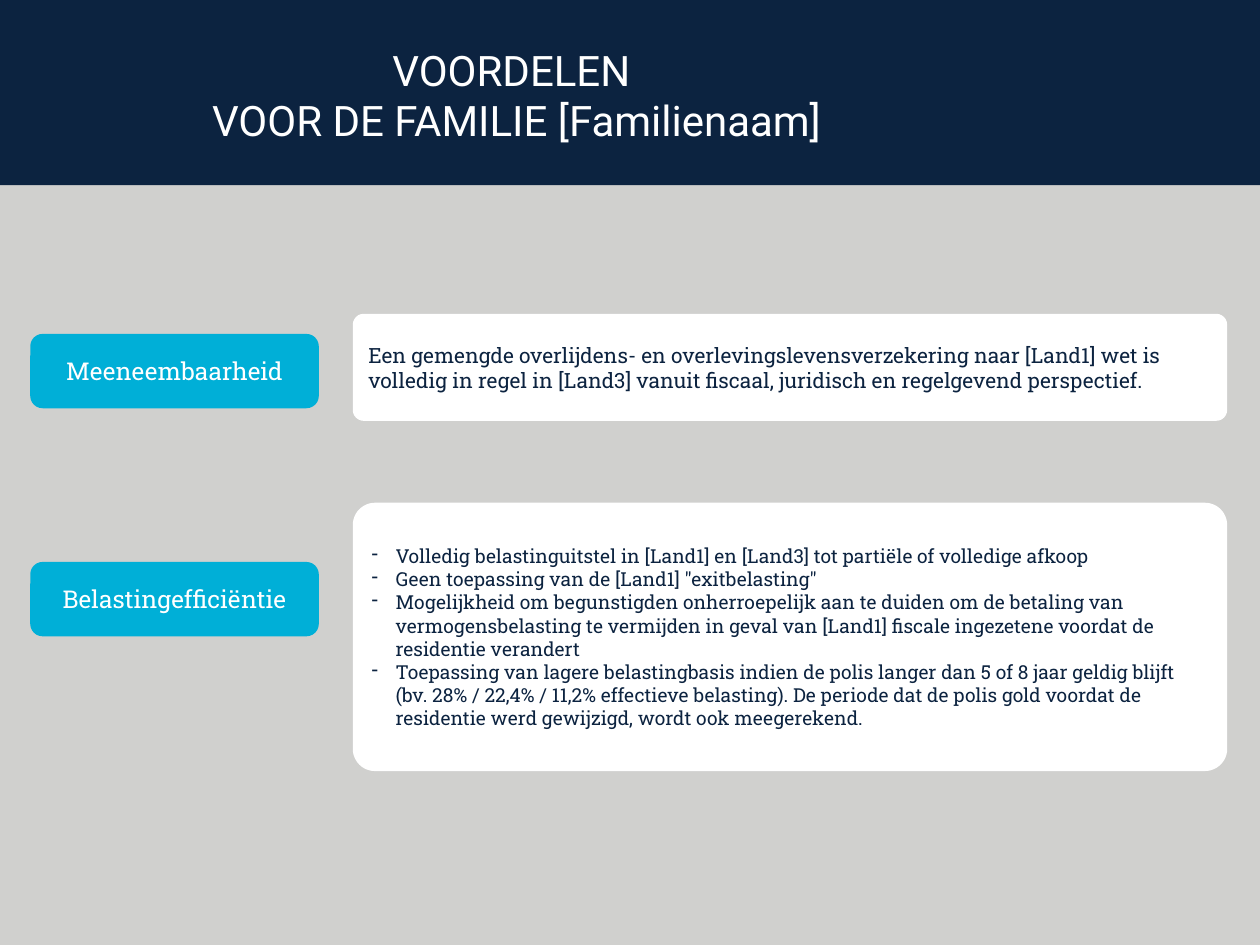
import dataclasses

import lxml.etree
import pptx
import pptx.dml.color
import pptx.enum.shapes
import pptx.enum.text
import pptx.oxml.ns
import pptx.util

ALIGN = pptx.enum.text.PP_ALIGN
ANCHOR = pptx.enum.text.MSO_ANCHOR
SHAPE = pptx.enum.shapes.MSO_SHAPE
inch = pptx.util.Inches


@dataclasses.dataclass(frozen=True)
class Theme:
    navy: str = "0C2340"
    cyan: str = "00AFD7"
    grey: str = "D0D0CE"
    white: str = "FFFFFF"
    title_font: str = "Roboto"
    body_font: str = "Roboto Slab"
    title_size: int = 24
    label_size: int = 14
    text_size: int = 12
    list_size: int = 11


THEME = Theme()

# Columns as (left, width); rows as (top, height), in inches
LABEL_COL = (0.24, 2.29)
PANEL_COL = (2.8, 6.94)
LABEL_HEIGHT = 0.59
HANGING = 0.19

TITLE = ["VOORDELEN ", "VOOR DE FAMILIE [Familienaam]"]
PORTABILITY = [
    "Een gemengde overlijdens- en overlevingslevensverzekering naar [Land1] wet is "
    "volledig in regel in [Land3] vanuit fiscaal, juridisch en regelgevend perspectief.",
]
TAX_EFFICIENCY = [
    "Volledig belastinguitstel in [Land1] en [Land3] tot partiële of volledige afkoop",
    'Geen toepassing van de [Land1] "exitbelasting"',
    "Mogelijkheid om begunstigden onherroepelijk aan te duiden om de betaling van "
    "vermogensbelasting te vermijden in geval van [Land1] fiscale ingezetene voordat "
    "de residentie verandert",
    "Toepassing van lagere belastingbasis indien de polis langer dan 5 of 8 jaar geldig "
    "blijft (bv. 28% / 22,4% / 11,2% effectieve belasting). De periode dat de polis gold "
    "voordat de residentie werd gewijzigd, wordt ook meegerekend.",
]


def rgb(color):
    return pptx.dml.color.RGBColor.from_string(color)


def add_dash(p):
    """Give a paragraph a hanging dash bullet."""
    pPr = p._p.get_or_add_pPr()
    pPr.set("marL", str(inch(HANGING)))
    pPr.set("indent", str(-inch(HANGING)))
    bullet = lxml.etree.SubElement(pPr, pptx.oxml.ns.qn("a:buChar"))
    bullet.set("char", "-")


def write(sp, lines, size, color, font, align=ALIGN.LEFT,
          anchor=ANCHOR.MIDDLE, dashed=False):
    tf = sp.text_frame
    tf.word_wrap = True
    tf.vertical_anchor = anchor
    for i, line in enumerate(lines):
        p = tf.add_paragraph() if i else tf.paragraphs[0]
        p.alignment = align
        if dashed:
            add_dash(p)
        r = p.add_run()
        r.text = line
        r.font.size = pptx.util.Pt(size)
        r.font.name = font
        r.font.color.rgb = rgb(color)


def add_box(slide, kind, col, row, fill, corner=None):
    (left, width), (top, height) = col, row
    sp = slide.shapes.add_shape(kind, inch(left), inch(top), inch(width), inch(height))
    sp.shadow.inherit = False
    sp.fill.solid()
    sp.fill.fore_color.rgb = rgb(fill)
    sp.line.fill.background()
    if corner is not None:
        sp.adjustments[0] = corner
    return sp


def add_panel(slide, row, corner, lines, size, dashed=False):
    sp = add_box(slide, SHAPE.ROUNDED_RECTANGLE, PANEL_COL, row, THEME.white, corner)
    write(sp, lines, size, THEME.navy, THEME.body_font, dashed=dashed)


def add_label(slide, top, text):
    sp = add_box(slide, SHAPE.ROUNDED_RECTANGLE, LABEL_COL, (top, LABEL_HEIGHT), THEME.cyan)
    write(sp, [text], THEME.label_size, THEME.white, THEME.body_font, ALIGN.CENTER)


def add_header(slide):
    band = add_box(slide, SHAPE.RECTANGLE, (-0.04, 10.04), (0, 1.47), THEME.navy)
    title = slide.shapes.title
    title._element.addprevious(band._element)  # band goes behind the title
    title.left, title.top = inch(-0.59), inch(0.3)
    title.width, title.height = inch(9.38), inch(1.31)
    title.text_frame.auto_size = pptx.enum.text.MSO_AUTO_SIZE.NONE
    write(title, TITLE, THEME.title_size, THEME.white, THEME.title_font,
          ALIGN.CENTER, ANCHOR.TOP)


def main():
    prs = pptx.Presentation()
    prs.slide_width, prs.slide_height = inch(10), inch(7.5)
    slide = prs.slides.add_slide(prs.slide_layouts.get_by_name("Title Only"))
    slide.background.fill.solid()
    slide.background.fill.fore_color.rgb = rgb(THEME.grey)

    add_header(slide)

    # Explanations on the right
    add_panel(slide, (2.49, 0.85), 0.103, PORTABILITY, THEME.text_size)
    add_panel(slide, (3.99, 2.13), 0.083, TAX_EFFICIENCY, THEME.list_size, dashed=True)

    # Benefit names on the left
    add_label(slide, 2.65, "Meeneembaarheid")
    add_label(slide, 4.46, "Belastingefficiëntie")

    prs.save("out.pptx")


if __name__ == "__main__":
    main()
